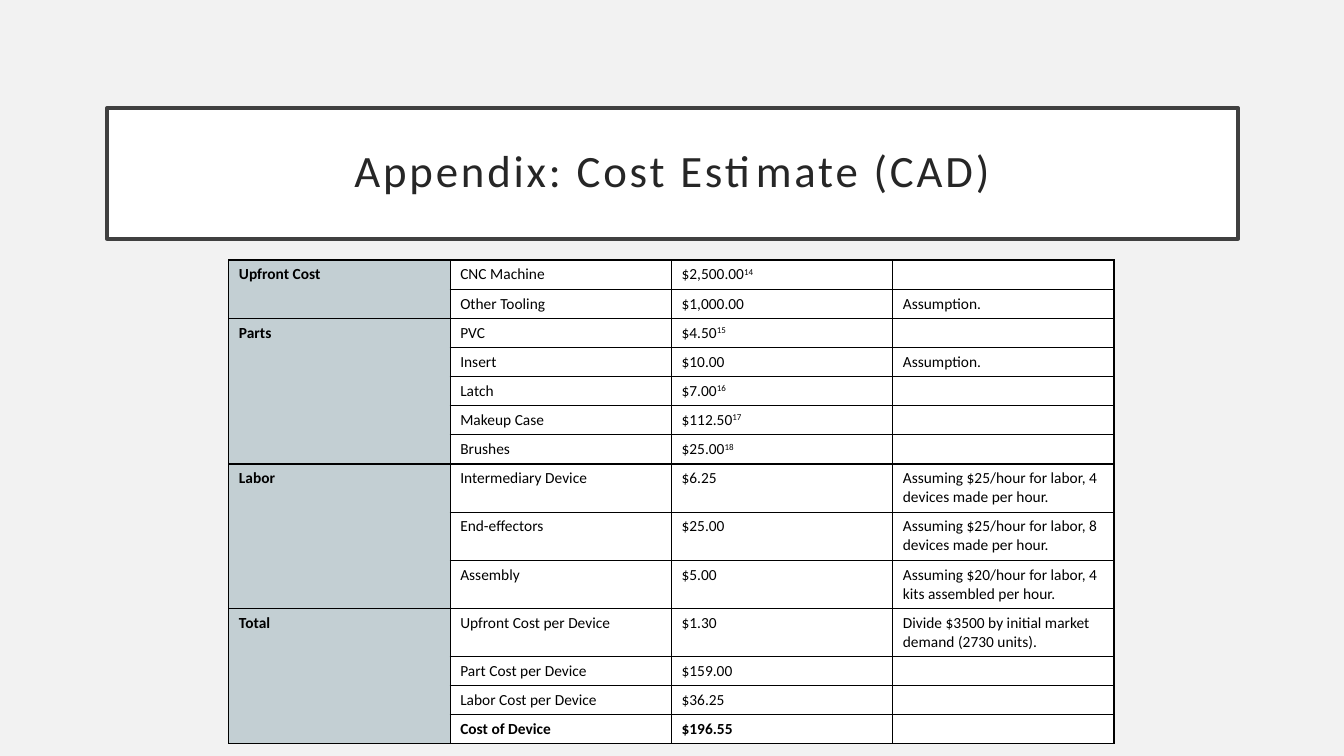
from lxml import etree
from pptx import Presentation
from pptx import util as u
from pptx.dml.color import RGBColor
from pptx.enum import text
from pptx.oxml.ns import qn

COLORS = {
    "background": "F2F2F2",
    "panel": "FFFFFF",
    "frame": "404040",
    "title": "262626",
    "group": "C3CFD3",
    "ink": "000000",
}

COSTS = {
    "Upfront Cost": [
        ("CNC Machine", "$2,500.00", "14", ""),
        ("Other Tooling", "$1,000.00", "", "Assumption."),
    ],
    "Parts": [
        ("PVC", "$4.50", "15", ""),
        ("Insert", "$10.00", "", "Assumption."),
        ("Latch", "$7.00", "16", ""),
        ("Makeup Case", "$112.50", "17", ""),
        ("Brushes", "$25.00", "18", ""),
    ],
    "Labor": [
        ("Intermediary Device", "$6.25", "", "Assuming $25/hour for labor, 4 devices made per hour."),
        ("End-effectors", "$25.00", "", "Assuming $25/hour for labor, 8 devices made per hour."),
        ("Assembly", "$5.00", "", "Assuming $20/hour for labor, 4 kits assembled per hour."),
    ],
    "Total": [
        ("Upfront Cost per Device", "$1.30", "", "Divide $3500 by initial market demand (2730 units)."),
        ("Part Cost per Device", "$159.00", "", ""),
        ("Labor Cost per Device", "$36.25", "", ""),
        ("Cost of Device", "$196.55", "", ""),
    ],
}


class SlideBuilder:
    font = "Calibri"

    def __init__(self, prs):
        self.slide = prs.slides.add_slide(prs.slide_layouts[5])
        self.paint(self.slide.background.fill, "background")

    def paint(self, fill, color):
        fill.solid()
        fill.fore_color.rgb = RGBColor.from_string(COLORS[color])

    def style(self, p, size, color, bold=False):
        p.font.name = self.font
        p.font.size = u.Pt(size)
        p.font.bold = bold
        p.font.color.rgb = RGBColor.from_string(COLORS[color])

    def title(self, words, left, top, width, height):
        sp = self.slide.shapes.title
        sp.left, sp.top = u.Inches(left), u.Inches(top)
        sp.width, sp.height = u.Inches(width), u.Inches(height)
        self.paint(sp.fill, "panel")
        self.paint(sp.line.fill, "frame")
        sp.line.width = u.Pt(2.5)
        tf = sp.text_frame
        tf.text = words
        tf.word_wrap = True
        tf.auto_size = text.MSO_AUTO_SIZE.NONE
        tf.vertical_anchor = text.MSO_ANCHOR.MIDDLE
        tf.margin_left = tf.margin_right = tf.margin_top = tf.margin_bottom = u.Inches(0.2)
        p = tf.paragraphs[0]
        p.alignment = text.PP_ALIGN.CENTER
        p.line_spacing = 0.9
        self.style(p, 32, "title")
        p.runs[0].font._element.set("spc", "200")

    def borders(self, cell):
        tcPr = cell._tc.get_or_add_tcPr()
        for index, side in enumerate(("a:lnL", "a:lnR", "a:lnT", "a:lnB")):
            ln = etree.Element(qn(side), w=str(u.Pt(1)))
            fill = etree.SubElement(ln, qn("a:solidFill"))
            etree.SubElement(fill, qn("a:srgbClr"), val=COLORS["ink"])
            tcPr.insert(index, ln)

    def cell(self, cell, words, color="panel", bold=False, note=""):
        self.paint(cell.fill, color)
        self.borders(cell)
        p = cell.text_frame.paragraphs[0]
        self.style(p, 11, "ink", bold)
        if words:
            p.add_run().text = words
        else:
            etree.SubElement(p._p, qn("a:endParaRPr"), sz="1100")
        if note:
            r = p.add_run()
            r.text = note
            r.font._element.set("baseline", "30000")

    def cost_table(self, costs, left, top, width, row_height):
        count = sum(len(items) for items in costs.values())
        frame = self.slide.shapes.add_table(
            count, 4, u.Inches(left), u.Inches(top), u.Inches(width), u.Inches(row_height * count))
        table = frame.table
        table.first_row = table.horz_banding = False
        for row in table.rows:
            row.height = u.Inches(row_height)
        start = 0
        for group, items in costs.items():
            for i, (item, price, note, remark) in enumerate(items, start):
                bold = item == "Cost of Device"
                self.cell(table.cell(i, 0), group if i == start else "", "group", True)
                self.cell(table.cell(i, 1), item, bold=bold)
                self.cell(table.cell(i, 2), price, bold=bold, note=note)
                self.cell(table.cell(i, 3), remark)
            end = start + len(items)
            table.cell(start, 0).merge(table.cell(end - 1, 0))
            start = end


def main():
    prs = Presentation()
    prs.slide_width, prs.slide_height = u.Inches(13.33), u.Inches(7.5)
    builder = SlideBuilder(prs)
    builder.title("Appendix: Cost Estimate (CAD)", 1.06, 1.07, 11.22, 1.3)
    builder.cost_table(COSTS, 2.27, 2.58, 8.78, 0.27)
    prs.save("out.pptx")


if __name__ == "__main__":
    main()
